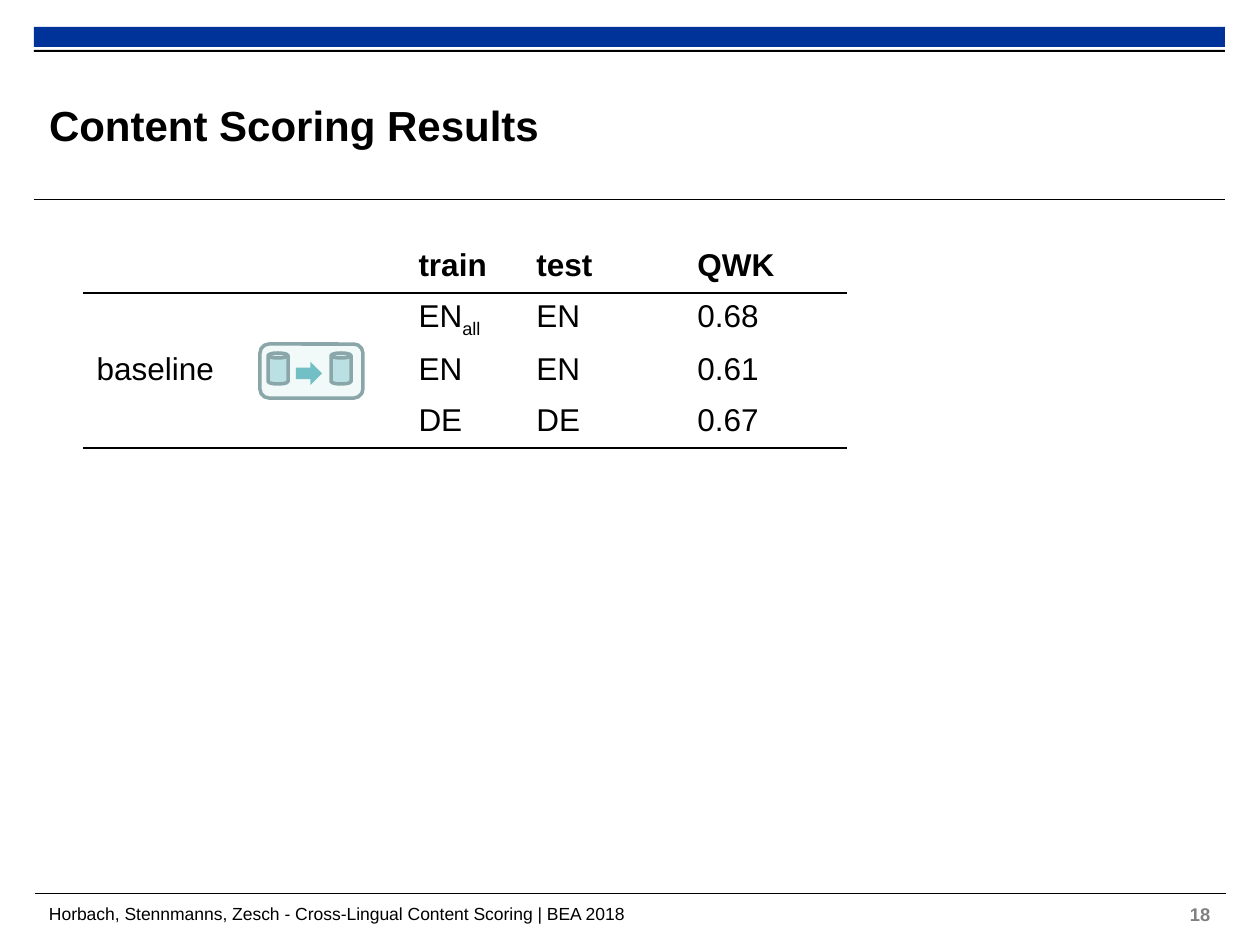
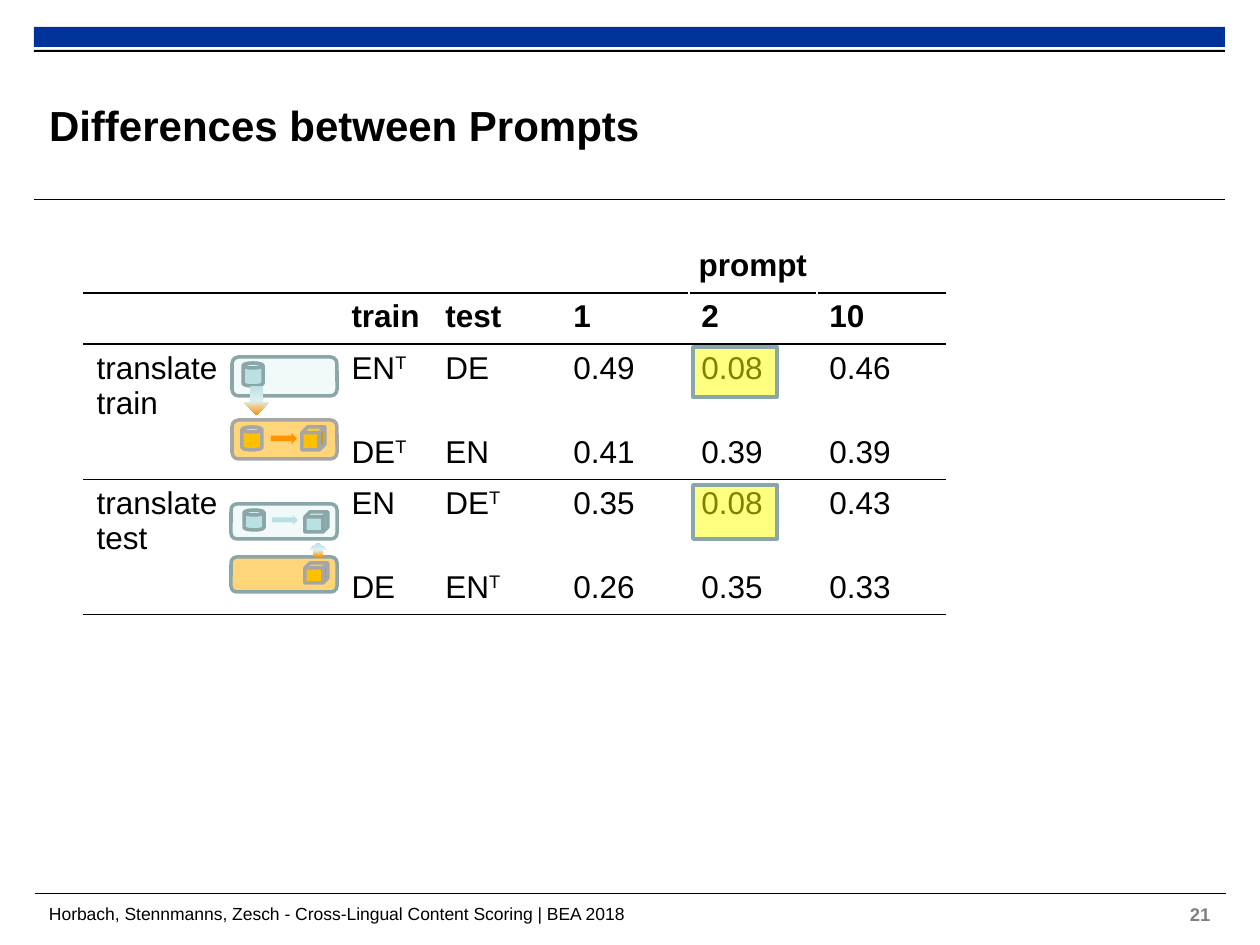
"""Build two slides of content scoring results with tables and diagram icons."""
from lxml import etree
from pptx import Presentation
from pptx.dml.color import RGBColor
from pptx.enum.shapes import MSO_CONNECTOR, MSO_SHAPE
from pptx.enum.text import MSO_ANCHOR, MSO_AUTO_SIZE, PP_ALIGN
from pptx.oxml.ns import qn
from pptx.util import Pt

PX = 914400 / 126
RECT, PANEL = MSO_SHAPE.RECTANGLE, MSO_SHAPE.ROUNDED_RECTANGLE
CAN, CUBE, ARROW = MSO_SHAPE.CAN, MSO_SHAPE.CUBE, MSO_SHAPE.RIGHT_ARROW
LEFT, CENTER = PP_ALIGN.LEFT, PP_ALIGN.CENTER
TOP, MIDDLE = MSO_ANCHOR.TOP, MSO_ANCHOR.MIDDLE
STRAIGHT, NO_FIT = MSO_CONNECTOR.STRAIGHT, MSO_AUTO_SIZE.NONE

THEME = {
    "font": "Arial",
    "black": "000000", "white": "FFFFFF", "grey": "808080", "band": "003399",
    "teal_pale": "F1F9F9", "teal": "BBE0E3", "teal_edge": "8AA6A8", "teal_arrow": "72BFC5",
    "amber_pale": "FFD579", "amber": "FFC000", "amber_edge": "A6A6A6", "amber_arrow": "FF9300",
    "fade_start": "DDF0F1", "fade_end": "E0F1F2", "highlight": "FFFF00",
    "title_size": 24, "table_size": 18, "number_size": 10.5, "footer_size": 10,
    "rule_width": 0.6, "border_width": 1, "icon_width": 2,
}
FADES = {
    "teal_to_amber": [(0, "teal"), (50, "fade_start"), (51, "fade_end"), (100, "amber_arrow")],
    "amber_to_teal": [(0, "amber_arrow"), (50, "fade_start"), (51, "fade_end"), (100, "teal")],
}
FOOTER = "Horbach, Stennmanns, Zesch - Cross-Lingual Content Scoring | BEA 2018"
ROW, TALL_ROW = 51, 84
TABLE_LEFT, TABLE_TOP = 84, 242

SLIDES = [
    {
        "title": "Content Scoring Results",
        "number": "18",
        "columns": [204, 118, 118, 161, 161],
        "heights": [ROW] * 4,
        "header_rows": 1,
        "ruled_rows": [0, 3],
        "rows": [
            ["", "", "train", "test", "QWK"],
            ["", "", "EN_all", "EN", "0.68"],
            ["baseline", "", "EN", "EN", "0.61"],
            ["", "", "DE", "DE", "0.67"],
        ],
        "shifted_labels": True,
        "icons": [[
            (PANEL, (260, 344, 103, 54), "teal_pale", "teal_edge", 0),
            (CAN, (268, 353, 20, 31), "teal", "teal_edge", 0),
            (CAN, (331, 353, 20, 31), "teal", "teal_edge", 0),
            (ARROW, (296, 362, 26, 23), "teal_arrow", None, 0),
        ]],
        "highlights": [],
    },
    {
        "title": "Differences between Prompts",
        "number": "21",
        "columns": [161, 94, 94] + [128] * 4,
        "heights": [ROW, ROW, TALL_ROW, ROW, TALL_ROW, ROW],
        "header_rows": 2,
        "ruled_rows": [0, 1, 3, 5],
        "merged_header": (4, 6),
        "rows": [
            ["", "", "", "", "prompt", "", ""],
            ["", "", "train", "test", "1", "2", "10"],
            ["translate train", "", "EN^T", "DE", "0.49", "0.08", "0.46"],
            ["", "", "DE^T", "EN", "0.41", "0.39", "0.39"],
            ["translate test", "", "EN", "DE^T", "0.35", "0.08", "0.43"],
            ["", "", "DE", "EN^T", "0.26", "0.35", "0.33"],
        ],
        "icons": [
            [
                (PANEL, (231, 504, 106, 35), "teal_pale", "teal_edge", 0),
                (PANEL, (231, 557, 106, 35), "amber_pale", "teal_edge", 0),
                (CAN, (244, 510, 20, 20), "teal", "teal_edge", 0),
                (ARROW, (311, 541, 14, 18), "amber_to_teal", None, 270),
                (ARROW, (272, 515, 26, 10), "teal", None, 0),
                (CUBE, (305, 512, 23, 20), "teal", "teal_edge", 0),
                (CUBE, (305, 563, 23, 20), "amber", "amber_edge", 0),
            ],
            [
                (PANEL, (232, 357, 105, 39), "teal_pale", "teal_edge", 0),
                (PANEL, (232, 420, 105, 39), "amber_pale", "amber_edge", 0),
                (CAN, (243, 363, 20, 23), "teal", "teal_edge", 0),
                (CAN, (242, 427, 20, 23), "amber", "amber_edge", 0),
                (ARROW, (242, 388, 29, 25), "teal_to_amber", None, 90),
                (ARROW, (271, 433, 26, 11), "amber_arrow", None, 0),
                (CUBE, (302, 427, 23, 23), "amber", "amber_edge", 0),
            ],
        ],
        "highlights": [(693, 347, 84, 50), (693, 485, 84, 54)],
    },
]


def draw(shapes, preset, box, fill, line=None, rotation=0):
    """Add a preset shape with a solid or fading fill and an optional outline."""
    shape = shapes.add_shape(preset, *[round(value * PX) for value in box])
    shape.shadow.inherit = False
    shape.rotation = rotation
    if fill in FADES:
        shape.fill.gradient()
        shape.fill.gradient_angle = 0
        stops = shape._element.spPr.find(qn("a:gradFill")).find(qn("a:gsLst"))
        for old_stop in list(stops):
            stops.remove(old_stop)
        for percent, color in FADES[fill]:
            stop = etree.SubElement(stops, qn("a:gs"), pos=str(percent * 1000))
            etree.SubElement(stop, qn("a:srgbClr"), val=THEME[color])
    else:
        shape.fill.solid()
        shape.fill.fore_color.rgb = RGBColor.from_string(THEME[fill])
    if line:
        shape.line.color.rgb = RGBColor.from_string(THEME[line])
        shape.line.width = Pt(THEME["icon_width"])
    else:
        shape.line.fill.background()
    return shape


def write(frame, text, size, color="black", bold=False, align=LEFT):
    """Write one paragraph, reading _ as subscript and ^ as superscript."""
    para = frame.paragraphs[0]
    para.alignment = align
    mark = "_" if "_" in text else "^"
    base, _, script = text.partition(mark)
    offset = "-25000" if mark == "_" else "30000"
    for part, baseline in [(base, None), (script, offset)]:
        if not part:
            continue
        span = para.add_run()
        span.text = part
        font_format = {"name": THEME["font"], "size": Pt(THEME[size]), "bold": bold}
        for name, value in font_format.items():
            setattr(span.font, name, value)
        span.font.color.rgb = RGBColor.from_string(THEME[color])
        if baseline:
            span.font._element.set("baseline", baseline)


deck = Presentation()
deck.slide_width, deck.slide_height = round(1260 * PX), round(945 * PX)
title_only = deck.slide_layouts[5]

for content in SLIDES:
    page = deck.slides.add_slide(title_only)
    draw(page.shapes, RECT, (34, 27, 1191, 20), "band")
    draw(page.shapes, RECT, (34, 50, 1191, 2), "black")
    for left, top in [(34, 200), (35, 894)]:
        ends = [left, top, left + 1191, top]
        rule = page.shapes.add_connector(STRAIGHT, *[round(value * PX) for value in ends])
        rule.line.color.rgb = RGBColor.from_string(THEME["black"])
        rule.line.width = Pt(THEME["rule_width"])
        etree.SubElement(rule._element.spPr, qn("a:effectLst"))

    title = page.shapes.title
    footer = page.shapes.add_textbox(0, 0, 0, 0)
    number = page.shapes.add_textbox(0, 0, 0, 0)
    for box, place, anchor, inset in [
        (title, (49, 67, 896, 116), MIDDLE, 0),
        (footer, (49, 903, 1096, 32), TOP, 0),
        (number, (1178, 897, 64, 35), TOP, 6),
    ]:
        for name, value in zip(["left", "top", "width", "height"], place):
            setattr(box, name, round(value * PX))
        frame_format = {
            "word_wrap": True, "auto_size": NO_FIT, "vertical_anchor": anchor,
            "margin_left": round(2 * inset * PX), "margin_right": round(2 * inset * PX),
            "margin_top": round(inset * PX), "margin_bottom": round(inset * PX),
        }
        for name, value in frame_format.items():
            setattr(box.text_frame, name, value)
    write(title.text_frame, content["title"], "title_size", bold=True)
    write(footer.text_frame, FOOTER, "footer_size")
    write(number.text_frame, content["number"], "number_size", "grey", True)

    columns, heights, rows = content["columns"], content["heights"], content["rows"]
    table_box = (TABLE_LEFT, TABLE_TOP, sum(columns), sum(heights))
    table = page.shapes.add_table(
        len(rows), len(columns), *[round(value * PX) for value in table_box]
    ).table
    table.first_row = table.horz_banding = False
    for column, width in zip(table.columns, columns):
        column.width = round(width * PX)
    for row, height in zip(table.rows, heights):
        row.height = round(height * PX)
    if "merged_header" in content:
        first, last = content["merged_header"]
        table.cell(0, first).merge(table.cell(0, last))

    for row_index, row in enumerate(rows):
        is_header = row_index < content["header_rows"]
        border_colors = {
            "a:lnL": "white",
            "a:lnR": "white",
            "a:lnT": "black" if row_index - 1 in content["ruled_rows"] else "white",
            "a:lnB": "black" if row_index in content["ruled_rows"] else "white",
        }
        for column_index, text in enumerate(row):
            cell = table.cell(row_index, column_index)
            align = CENTER if cell.is_merge_origin else LEFT
            write(cell.text_frame, text, "table_size", bold=is_header, align=align)
            properties = cell._tc.get_or_add_tcPr()
            for tag, color in border_colors.items():
                width = str(Pt(THEME["border_width"]))
                border = etree.SubElement(properties, qn(tag), w=width)
                paint = etree.SubElement(border, qn("a:solidFill"))
                etree.SubElement(paint, qn("a:srgbClr"), val=THEME[color])
            cell.fill.solid()
            cell.fill.fore_color.rgb = RGBColor.from_string(THEME["white"])

    for icon in content["icons"]:
        group = page.shapes.add_group_shape()
        for part in icon:
            draw(group.shapes, *part)
    for box in content["highlights"]:
        marker = draw(page.shapes, RECT, box, "highlight", "teal_edge")
        color = marker._element.spPr.find(qn("a:solidFill")).find(qn("a:srgbClr"))
        etree.SubElement(color, qn("a:alpha"), val="50000")

deck.save("out.pptx")
